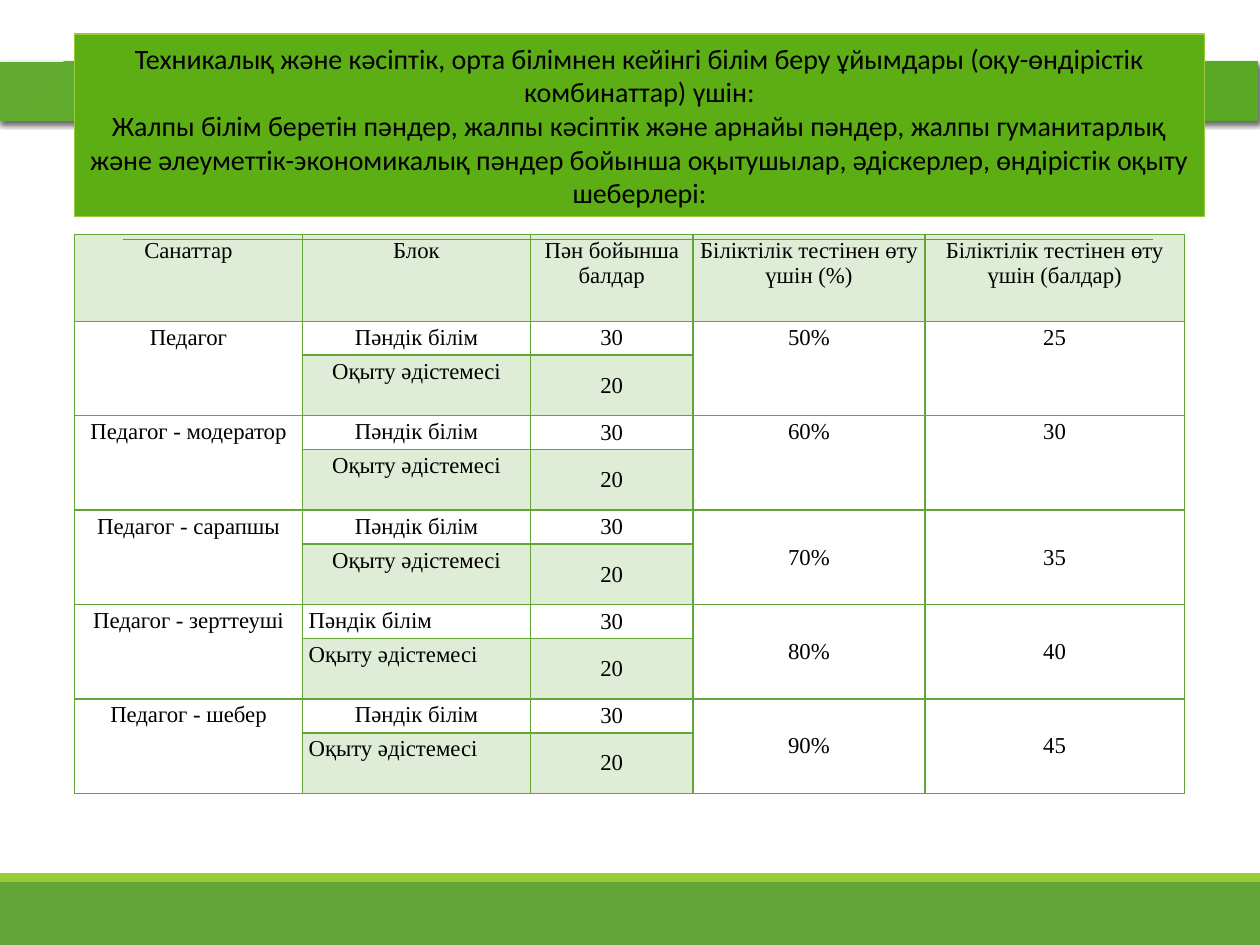
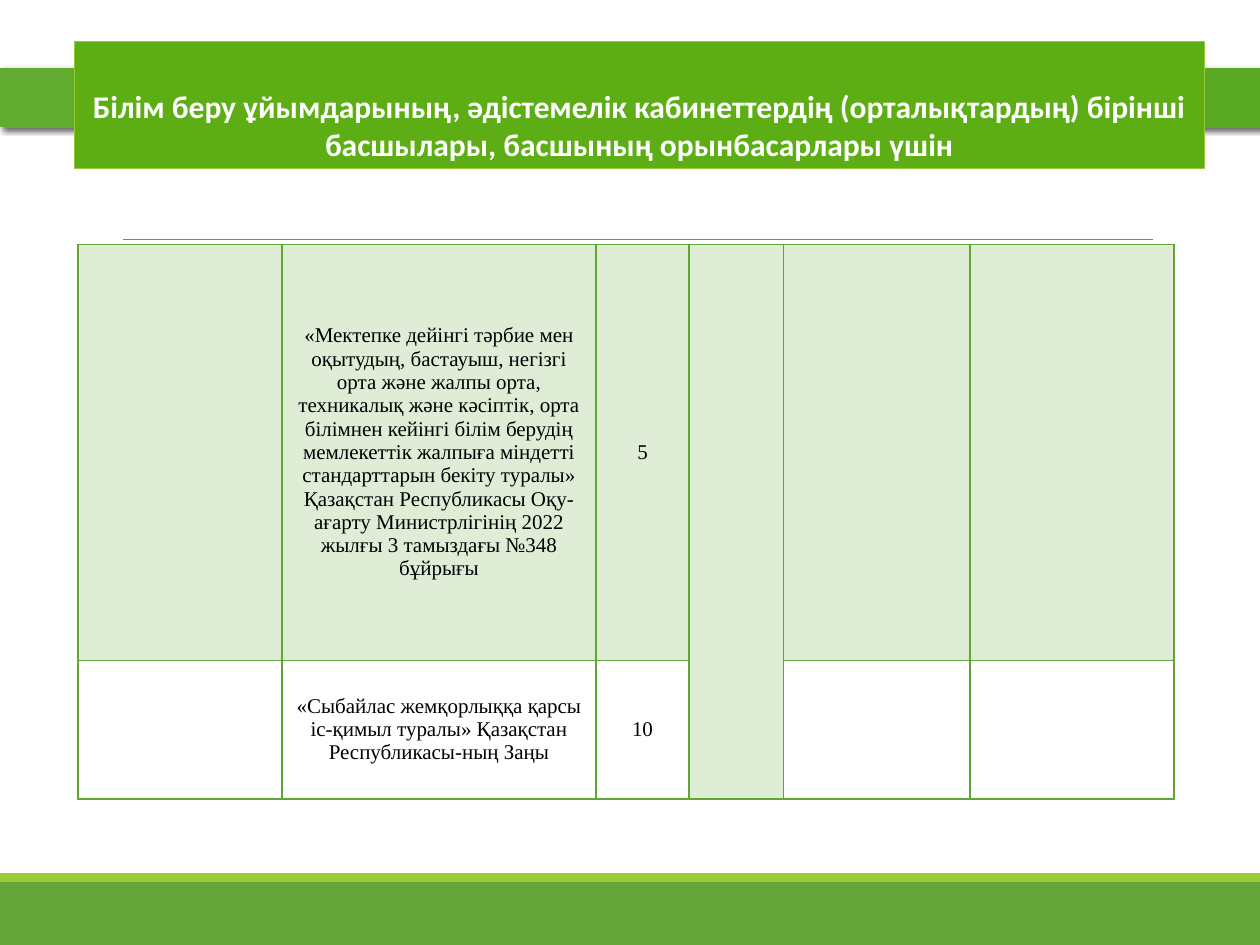
from lxml.etree import SubElement
from pptx import Presentation
from pptx.dml.color import RGBColor
from pptx.enum.shapes import MSO_CONNECTOR, MSO_SHAPE
from pptx.enum.text import MSO_ANCHOR, MSO_AUTO_SIZE, PP_ALIGN
from pptx.oxml import parse_xml
from pptx.oxml.ns import nsdecls, qn
from pptx.util import Inches, Pt

GREEN, LIME, TITLE_FILL = "63A537", "99CB38", "5DAE14"
BLACK, WHITE, GREY = "000000", "FFFFFF", "808080"
BAND_STOPS = [(0, "59A924"), (34, "5BA827"), (70, "5BAD25"), (100, "62AB31")]
TOP, MIDDLE, BOTTOM = MSO_ANCHOR.TOP, MSO_ANCHOR.MIDDLE, MSO_ANCHOR.BOTTOM
CENTER, LEFT = PP_ALIGN.CENTER, PP_ALIGN.LEFT


def rgb(color):
    return RGBColor.from_string(color)


def format_cell(cell, text, size, tinted, anchor=MIDDLE, align=CENTER, margins=(0.05, 0.03)):
    side, edge = (Inches(m) for m in margins)
    values = {"margin_left": side, "margin_right": side, "margin_top": edge,
              "margin_bottom": edge, "vertical_anchor": anchor}
    for name, value in values.items():
        setattr(cell, name, value)
    p = cell.text_frame.paragraphs[0]
    p.alignment = align
    if text:
        r = p.add_run()
        r.text = text
        for name, value in {"name": "Times New Roman", "size": Pt(size)}.items():
            setattr(r.font, name, value)
        r.font.color.rgb = rgb(BLACK)
    else:
        p._p.get_or_add_endParaRPr().set("sz", str(size * 100))

    # Transparent tint and green borders
    tcPr = cell._tc.get_or_add_tcPr()
    if tinted:
        cell.fill.solid()
        cell.fill.fore_color.rgb = rgb(GREEN)
        SubElement(tcPr.find(".//" + qn("a:srgbClr")), qn("a:alpha"), val="20000")
    else:
        cell.fill.background()
    for i, tag in enumerate(("lnL", "lnR", "lnT", "lnB")):
        tcPr.insert(i, parse_xml(
            f'<a:{tag} {nsdecls("a")} w="12700"><a:solidFill><a:srgbClr val="{GREEN}"/>'
            f'</a:solidFill></a:{tag}>'))


prs = Presentation()
prs.slide_width, prs.slide_height = Inches(10), Inches(7.5)
layout = prs.slide_layouts[5]

titles = [
    dict(lines=["Техникалық және кәсіптік, орта білімнен кейінгі білім беру ұйымдары "
                "(оқу-өндірістік комбинаттар) үшін:",
                "Жалпы білім беретін пәндер, жалпы кәсіптік және арнайы пәндер, жалпы "
                "гуманитарлық және әлеуметтік-экономикалық пәндер бойынша оқытушылар, "
                "әдіскерлер, өндірістік оқыту шеберлері:"],
         top=0.27, height=1.45, band=(-0.02, 0.49), anchor=MIDDLE,
         font={"size": Pt(16), "bold": False}, color=BLACK),
    dict(lines=["Білім беру ұйымдарының, әдістемелік кабинеттердің (орталықтардың) "
                "бірінші басшылары, басшының орынбасарлары үшін"],
         top=0.33, height=1.01, band=(0, 0.54), anchor=BOTTOM,
         font={"size": Pt(18), "bold": True}, color=WHITE),
]

# Title boxes with the gradient band behind them
stops = "".join(f'<a:gs pos="{pos * 1000}"><a:srgbClr val="{color}"/></a:gs>'
                for pos, color in BAND_STOPS)
slides = []
for item in titles:
    s = prs.slides.add_slide(layout)
    slides.append(s)
    title = s.shapes.title
    title.left, title.top = Inches(0.59), Inches(item["top"])
    title.width, title.height = Inches(8.97), Inches(item["height"])
    title.fill.solid()
    title.fill.fore_color.rgb = rgb(TITLE_FILL)
    title.line.color.rgb = rgb(LIME)
    title.line.width = Pt(0.75)
    tf = title.text_frame
    tf.word_wrap, tf.auto_size = True, MSO_AUTO_SIZE.NONE
    tf.vertical_anchor = item["anchor"]
    for i, line in enumerate(item["lines"]):
        p = tf.add_paragraph() if i else tf.paragraphs[0]
        p.alignment = CENTER
        r = p.add_run()
        r.text = line
        for name, value in {"name": "Calibri", **item["font"]}.items():
            setattr(r.font, name, value)
        r.font.color.rgb = rgb(item["color"])

    left, top = item["band"]
    band = s.shapes.add_shape(MSO_SHAPE.RECTANGLE, Inches(left), Inches(top),
                              Inches(10), Inches(0.47))
    band.line.fill.background()
    spPr = band._element.spPr
    spPr.insert(2, parse_xml(
        f'<a:gradFill {nsdecls("a")}><a:gsLst>{stops}</a:gsLst><a:path path="circle">'
        '<a:fillToRect l="100000" t="100000" r="0" b="0"/></a:path></a:gradFill>'))
    spPr.append(parse_xml(
        f'<a:effectLst {nsdecls("a")}><a:outerShdw blurRad="44450" dist="25400" dir="2700000">'
        f'<a:srgbClr val="{BLACK}"><a:alpha val="60000"/></a:srgbClr></a:outerShdw></a:effectLst>'))
    title._element.addprevious(band._element)

# Footer bars and thin rule, moved to the shared layout
shapes = slides[0].shapes
for top, height, color in [(7, 0.5, GREEN), (6.93, 0.07, LIME)]:
    sp = shapes.add_shape(MSO_SHAPE.RECTANGLE, 0, Inches(top), Inches(10), Inches(height))
    sp.shadow.inherit = False
    sp.fill.solid()
    sp.fill.fore_color.rgb = rgb(color)
    sp.line.fill.background()
    layout.shapes._spTree.append(sp._element)
rule = shapes.add_connector(MSO_CONNECTOR.STRAIGHT, Inches(0.98), Inches(1.9),
                            Inches(9.15), Inches(1.9))
rule.line.color.rgb = rgb(GREY)
rule.line.width = Pt(0.5)
SubElement(rule._element.spPr, qn("a:effectLst"))
layout.shapes._spTree.append(rule._element)

# Empty tables
grids = [
    (0.59, 1.86, [1.81, 1.81, 1.29, 1.84, 2.06], [0.69] + [0.27, 0.48] * 5),
    (0.62, 1.94, [1.62, 2.49, 0.74, 0.75, 1.48, 1.62], [3.3, 1.1]),
]
tables = []
for s, (left, top, widths, heights) in zip(slides, grids):
    table = s.shapes.add_table(len(heights), len(widths), Inches(left), Inches(top),
                               Inches(sum(widths)), Inches(sum(heights))).table
    table.first_row = table.horz_banding = False
    for col, width in zip(table.columns, widths):
        col.width = Inches(width)
    for row, height in zip(table.rows, heights):
        row.height = Inches(height)
    tables.append(table)
scores, laws = tables

# Pass scores by category: two rows each
headers = ["Санаттар", "Блок", "Пән бойынша балдар",
           "Біліктілік тестінен өту үшін (%)", "Біліктілік тестінен өту үшін (балдар)"]
for c, text in enumerate(headers):
    format_cell(scores.cell(0, c), text, 13, True, TOP)
categories = [
    ("Педагог", "50%", "25", TOP, CENTER, CENTER),
    ("Педагог - модератор", "60%", "30", TOP, CENTER, CENTER),
    ("Педагог - сарапшы", "70%", "35", MIDDLE, CENTER, CENTER),
    ("Педагог - зерттеуші", "80%", "40", MIDDLE, LEFT, LEFT),
    ("Педагог - шебер", "90%", "45", MIDDLE, CENTER, LEFT),
]
for i, (category, percent, points, anchor, *aligns) in enumerate(categories):
    row = 1 + 2 * i
    blocks = [("Пәндік білім", "30"), ("Оқыту әдістемесі", "20")]
    for k, (block, score) in enumerate(blocks):
        format_cell(scores.cell(row + k, 1), block, 13, k == 1, TOP, aligns[k])
        format_cell(scores.cell(row + k, 2), score, 13, k == 1)
    for c, text, place in [(0, category, TOP), (3, percent, anchor), (4, points, anchor)]:
        format_cell(scores.cell(row, c), text, 13, False, place)
        format_cell(scores.cell(row + 1, c), "", 13, False, place)
        scores.cell(row, c).merge(scores.cell(row + 1, c))

# Laws and question counts
law_rows = [
    ("«Мектепке дейінгі тәрбие мен оқытудың, бастауыш, негізгі орта және жалпы орта, "
     "техникалық және кәсіптік, орта білімнен кейінгі білім берудің мемлекеттік жалпыға "
     "міндетті стандарттарын бекіту туралы» Қазақстан Республикасы Оқу-ағарту "
     "Министрлігінің 2022 жылғы 3 тамыздағы №348 бұйрығы", "5"),
    ("«Сыбайлас жемқорлыққа қарсы іс-қимыл туралы» Қазақстан Республикасы-ның Заңы", "10"),
]
for i, (law, count) in enumerate(law_rows):
    for c, text in enumerate(["", law, count, "", "", ""]):
        margins = (0.06, 0) if c == 1 else (0.04, 0.02)
        format_cell(laws.cell(i, c), text, 12, i == 0 or c == 3, margins=margins)
laws.cell(0, 3).merge(laws.cell(1, 3))

prs.save("out.pptx")
